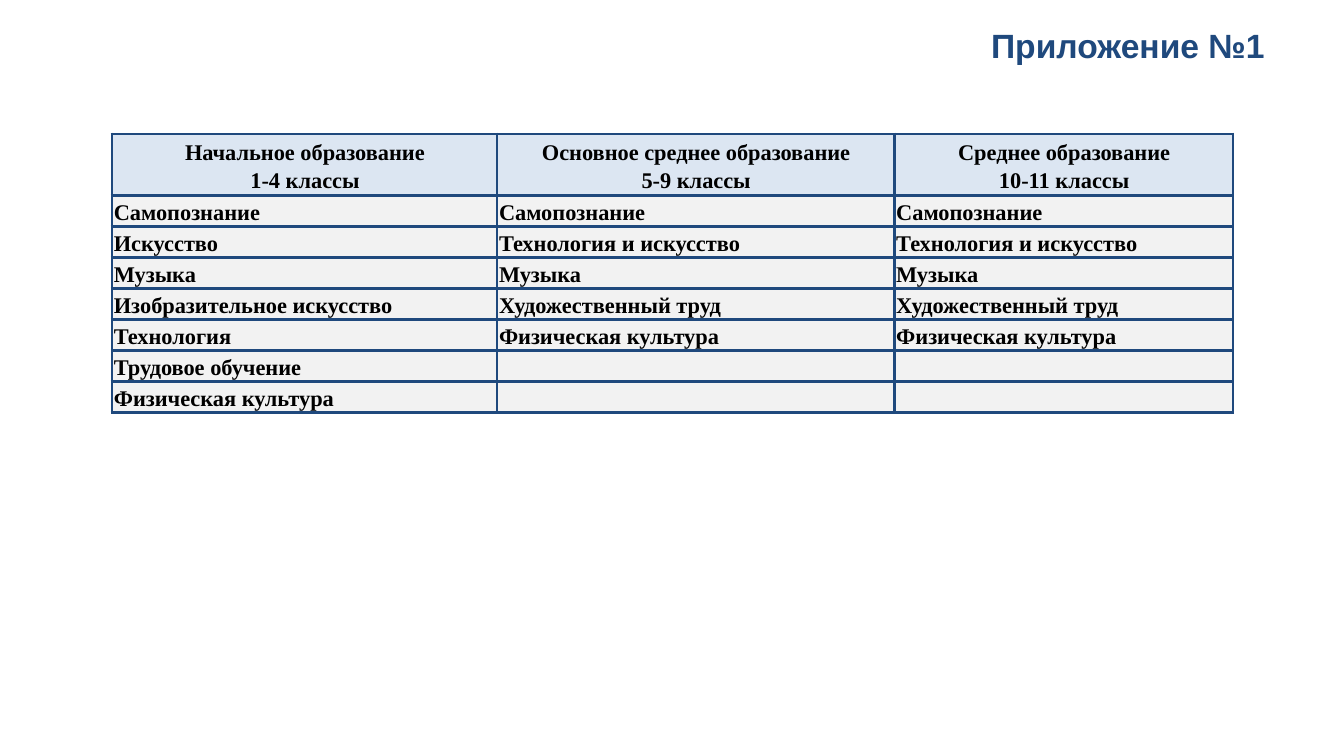
import dataclasses

import lxml.etree
import pptx
import pptx.dml.color
import pptx.enum.text
import pptx.oxml.ns
import pptx.util

Inches = pptx.util.Inches
Pt = pptx.util.Pt
qn = pptx.oxml.ns.qn

NAVY = "1F497D"
BLACK = "000000"
HEADER_FILL = "DCE6F2"
BODY_FILL = "F2F2F2"
SUBJECT_SIZE = 16
BORDER_WIDTH = 2.25
SIDE_MARGIN = 0.01
TABLE_HEIGHT = 2.74
HEADER_HEIGHT = 0.6


@dataclasses.dataclass
class SchoolStage:
    heading: str
    width: float
    subjects: list[str]


SENIOR_SUBJECTS = [
    "Самопознание",
    "Технология и искусство",
    "Музыка",
    "Художественный труд",
    "Физическая культура",
]
STAGES = [
    SchoolStage("Начальное образование\n1-4 классы", 3.82, [
        "Самопознание",
        "Искусство",
        "Музыка",
        "Изобразительное искусство",
        "Технология",
        "Трудовое обучение",
        "Физическая культура",
    ]),
    SchoolStage("Основное среднее образование\n5-9 классы", 3.94, SENIOR_SUBJECTS),
    SchoolStage("Среднее образование\n10-11 классы", 3.36, SENIOR_SUBJECTS),
]


def color(value: str) -> pptx.dml.color.RGBColor:
    return pptx.dml.color.RGBColor.from_string(value)


def style_run(run, font_name: str, size: float, font_color: str) -> None:
    run.font.name = font_name
    run.font.size = Pt(size)
    run.font.bold = True
    run.font.color.rgb = color(font_color)


def add_borders(cell) -> None:
    properties = cell._tc.get_or_add_tcPr()
    for side in ("a:lnL", "a:lnR", "a:lnT", "a:lnB"):
        border = lxml.etree.SubElement(properties, qn(side), w=str(Pt(BORDER_WIDTH)))
        fill = lxml.etree.SubElement(border, qn("a:solidFill"))
        lxml.etree.SubElement(fill, qn("a:srgbClr"), val=NAVY)


def fill_cell(cell, text: str, fill: str, alignment) -> None:
    add_borders(cell)
    cell.fill.solid()
    cell.fill.fore_color.rgb = color(fill)
    cell.margin_left = cell.margin_right = Inches(SIDE_MARGIN)
    cell.margin_top = cell.margin_bottom = 0
    cell.vertical_anchor = pptx.enum.text.MSO_ANCHOR.MIDDLE
    cell.text_frame.text = text
    for paragraph in cell.text_frame.paragraphs:
        paragraph.alignment = alignment
        if not text:
            # An empty cell keeps the row height of its neighbours
            lxml.etree.SubElement(paragraph._p, qn("a:endParaRPr"),
                                  sz=str(SUBJECT_SIZE * 100))
            continue
        paragraph.line_spacing = 1.15
        paragraph.space_after = Pt(0)
        paragraph._p.get_or_add_pPr().set("marL", str(Inches(SIDE_MARGIN)))
        for run in paragraph.runs:
            style_run(run, "Times New Roman", SUBJECT_SIZE, BLACK)


def add_title(slide) -> None:
    title = slide.shapes.add_textbox(Inches(9.83), Inches(0.25), Inches(2.75), Inches(0.4))
    frame = title.text_frame
    frame.margin_left = frame.margin_right = frame.margin_top = frame.margin_bottom = 0
    frame.word_wrap = True
    frame.text = "Приложение №1"
    style_run(frame.paragraphs[0].runs[0], "Arial", 24, NAVY)


def add_subject_table(slide, stages: list[SchoolStage]) -> None:
    subject_rows = max(len(stage.subjects) for stage in stages)
    subject_height = (TABLE_HEIGHT - HEADER_HEIGHT) / subject_rows
    table = slide.shapes.add_table(
        subject_rows + 1, len(stages), Inches(1.11), Inches(1.33),
        Inches(sum(stage.width for stage in stages)), Inches(TABLE_HEIGHT),
    ).table
    table.first_row = False
    table.horz_banding = False
    for index, row in enumerate(table.rows):
        row.height = Inches(subject_height if index else HEADER_HEIGHT)

    align = pptx.enum.text.PP_ALIGN
    for column, stage in enumerate(stages):
        table.columns[column].width = Inches(stage.width)
        fill_cell(table.cell(0, column), stage.heading, HEADER_FILL, align.CENTER)
        blanks = [""] * (subject_rows - len(stage.subjects))
        for row, subject in enumerate(stage.subjects + blanks, start=1):
            fill_cell(table.cell(row, column), subject, BODY_FILL, align.LEFT)


def main() -> None:
    presentation = pptx.Presentation()
    presentation.slide_width = Inches(13.33)
    presentation.slide_height = Inches(7.5)
    slide = presentation.slides.add_slide(presentation.slide_layouts[6])

    # Appendix title
    add_title(slide)

    # Subjects by school stage
    add_subject_table(slide, STAGES)

    presentation.save("out.pptx")


if __name__ == "__main__":
    main()
